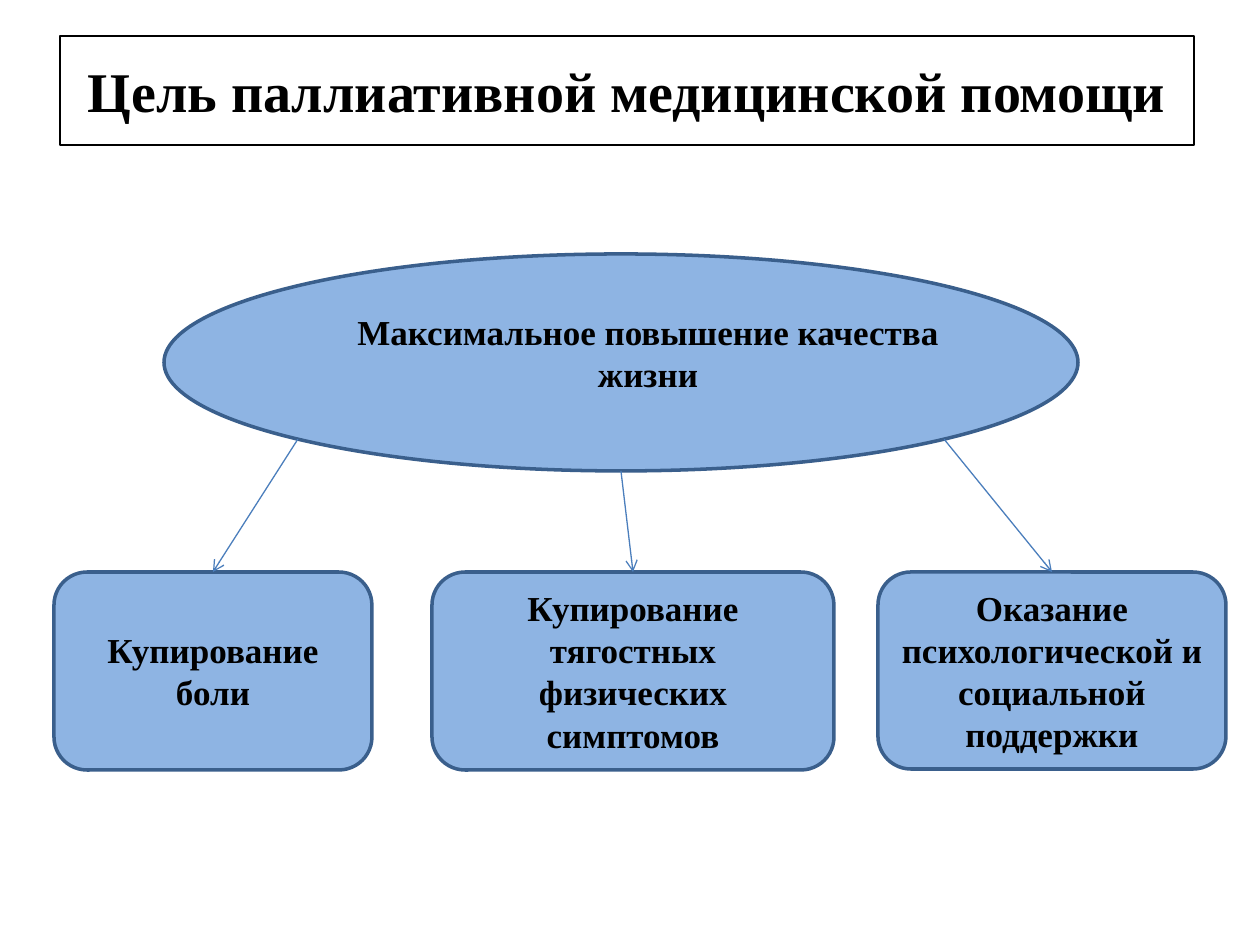
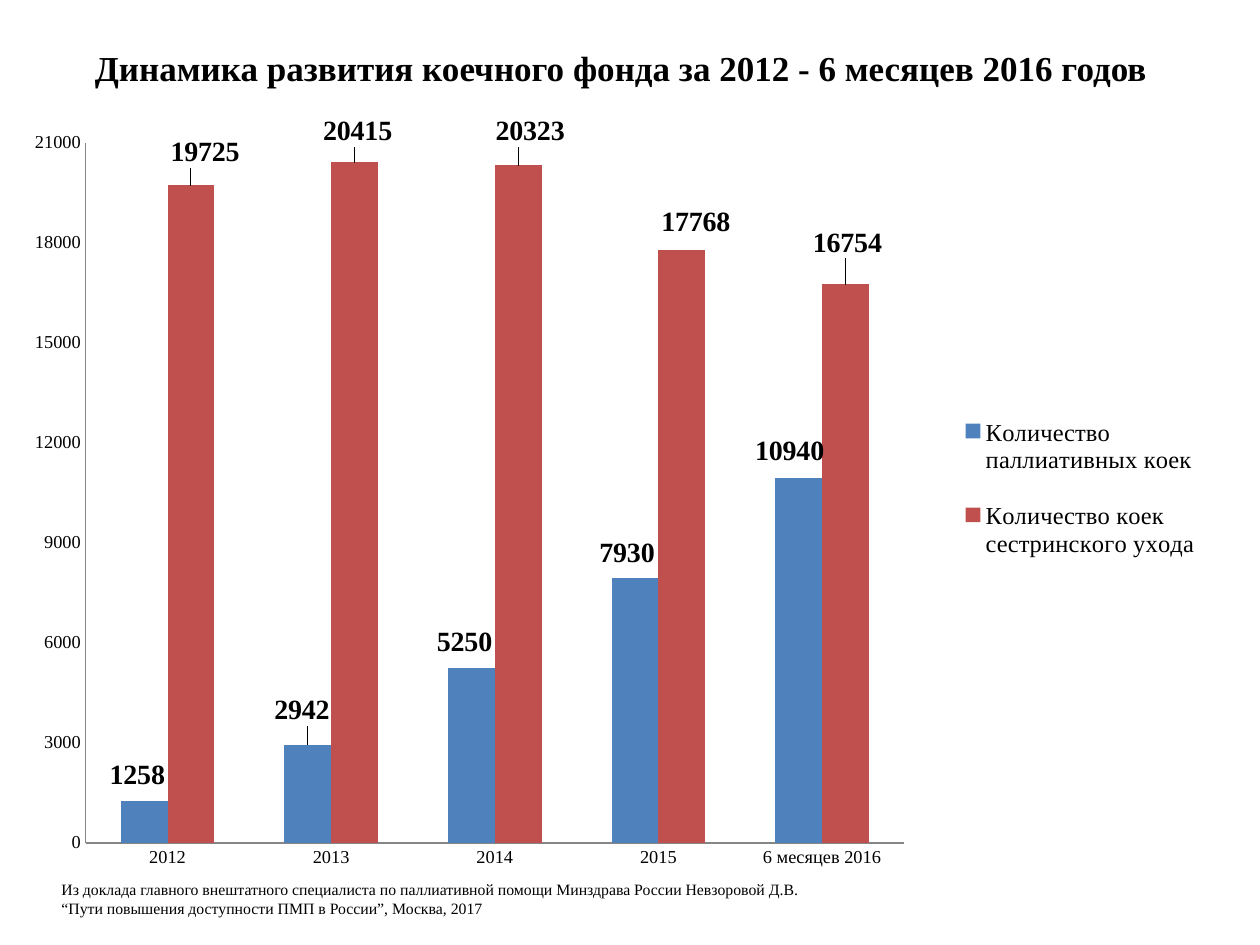
from dataclasses import dataclass
from math import sqrt

from lxml import etree
from pptx import Presentation
from pptx.chart.data import CategoryChartData
from pptx.dml.color import RGBColor
from pptx.enum.chart import XL_CHART_TYPE, XL_LABEL_POSITION, XL_LEGEND_POSITION, XL_TICK_MARK
from pptx.enum.shapes import MSO_CONNECTOR, MSO_SHAPE
from pptx.enum.text import MSO_ANCHOR, PP_ALIGN
from pptx.oxml.ns import qn
from pptx.util import Emu, Pt

RECTANGLE, ELLIPSE, ROUNDED = MSO_SHAPE.RECTANGLE, MSO_SHAPE.OVAL, MSO_SHAPE.ROUNDED_RECTANGLE
STRAIGHT = MSO_CONNECTOR.STRAIGHT
LEFT, CENTER = PP_ALIGN.LEFT, PP_ALIGN.CENTER
TOP, MIDDLE = MSO_ANCHOR.TOP, MSO_ANCHOR.MIDDLE
NO_TICKS = XL_TICK_MARK.NONE

PIXELS_PER_INCH = 126
FONT = "Times New Roman"
COLORS = {
    "text": "000000",
    "title_fill": "FFFFFF",
    "goal_fill": "8EB4E3",
    "goal_line": "3A5F8C",
    "arrow": "4B7EBC",
    "palliative": "4F81BD",
    "nursing": "C0504D",
    "axis": "868686",
}


@dataclass(frozen=True)
class Box:
    left: int
    top: int
    width: int
    height: int

    def emu(self):
        return [px(value) for value in (self.left, self.top, self.width, self.height)]


@dataclass(frozen=True)
class Task:
    box: Box
    lines: tuple[str, ...]


@dataclass(frozen=True)
class BedSeries:
    name: str
    color: str
    values: tuple[int, ...]
    label_shifts: tuple[tuple[int, int], ...]


TITLE_BOX = Box(60, 36, 1134, 109)
CHART_TITLE_BOX = Box(54, 43, 1134, 48)
GOAL_BOX = Box(164, 254, 914, 217)
GOAL_TEXT_BOX = Box(333, 304, 630, 97)
TASKS = (
    Task(Box(54, 572, 318, 198), ("Купирование боли",)),
    Task(Box(432, 572, 402, 198), ("Купирование тягостных", "физических симптомов")),
    Task(Box(878, 572, 348, 197), ("Оказание психологической и социальной поддержки",)),
)
CHART_BOX = Box(15, 116, 1221, 774)
PLOT_BOX = Box(86, 137, 818, 706)
LEGEND_BOX = Box(950, 386, 260, 198)
SOURCE_BOX = Box(49, 874, 775, 71)
PERIODS = ("2012", "2013", "2014", "2015", "6 месяцев 2016")
BEDS = (
    BedSeries("Количество паллиативных коек", "palliative", (1258, 2942, 5250, 7930, 10940),
              ((-7, -5), (-6, -14), (-7, -5), (-8, -5), (-9, -6))),
    BedSeries("Количество коек сестринского ухода", "nursing", (19725, 20415, 20323, 17768, 16754),
              ((14, -12), (3, -10), (12, -13), (14, -8), (2, -21))),
)


def px(value: float) -> Emu:
    return Emu(round(value * 914400 / PIXELS_PER_INCH))


def rgb(name: str) -> RGBColor:
    return RGBColor.from_string(COLORS[name])


def style_font(font, size: float, bold: bool = False) -> None:
    font.name, font.size, font.bold = FONT, Pt(size), bold
    font.color.rgb = rgb("text")


def write(shape, lines: tuple[str, ...], size: float, bold: bool = True,
          align=CENTER, anchor=MIDDLE) -> None:
    frame = shape.text_frame
    frame.word_wrap = True
    frame.vertical_anchor = anchor
    frame.text = "\n".join(lines)
    for paragraph in frame.paragraphs:
        paragraph.alignment = align
        style_font(paragraph.font, size, bold)


def add_text(slide, box: Box, text: str, size: float, **style) -> None:
    write(slide.shapes.add_textbox(*box.emu()), (text,), size, **style)


def add_outlined(slide, kind, box: Box, fill: str, line: str, line_width: float):
    shape = slide.shapes.add_shape(kind, *box.emu())
    shape.shadow.inherit = False
    shape.fill.solid()
    shape.fill.fore_color.rgb = rgb(fill)
    shape.line.color.rgb = rgb(line)
    shape.line.width = Pt(line_width)
    return shape


def add_arrow(slide, start: tuple[float, float], target) -> None:
    """Draw an arrow from a point to the top centre of the target shape."""
    arrow = slide.shapes.add_connector(STRAIGHT, px(start[0]), px(start[1]), 0, 0)
    arrow.end_connect(target, 0)
    arrow.line.color.rgb = rgb("arrow")
    arrow.line.width = Pt(0.75)
    etree.SubElement(arrow.line._get_or_add_ln(), qn("a:tailEnd"), type="arrow")
    etree.SubElement(arrow._element.spPr, qn("a:effectLst"))


def set_layout(parent, index: int, settings: dict[str, str | float]) -> None:
    """Give a chart element a manual layout as its child at the index."""
    for previous in parent.findall(qn("c:layout")):
        parent.remove(previous)
    layout = etree.Element(qn("c:layout"))
    manual = etree.SubElement(layout, qn("c:manualLayout"))
    for tag, value in settings.items():
        etree.SubElement(manual, qn(f"c:{tag}"), val=str(value))
    parent.insert(index, layout)


def chart_fractions(box: Box) -> dict[str, str | float]:
    return {
        "xMode": "edge",
        "yMode": "edge",
        "x": round((box.left - CHART_BOX.left) / CHART_BOX.width, 3),
        "y": round((box.top - CHART_BOX.top) / CHART_BOX.height, 3),
        "w": round(box.width / CHART_BOX.width, 3),
        "h": round(box.height / CHART_BOX.height, 3),
    }


def style_axis(axis) -> None:
    axis.has_major_gridlines = False
    axis.major_tick_mark = axis.minor_tick_mark = NO_TICKS
    axis.format.line.color.rgb = rgb("axis")
    axis.format.line.width = Pt(0.75)
    style_font(axis.tick_labels.font, 10.5)


def style_series(series, beds: BedSeries) -> None:
    series.format.fill.solid()
    series.format.fill.fore_color.rgb = rgb(beds.color)
    labels = series.data_labels
    labels.show_value = True
    style_font(labels.font, 16, bold=True)
    for index in range(len(beds.values)):
        label = series.points[index].data_label
        label.position = XL_LABEL_POSITION.OUTSIDE_END
        style_font(label.font, 16, bold=True)
    for element, (right, down) in zip(labels._element.findall(qn("c:dLbl")), beds.label_shifts):
        set_layout(element, 1, {"x": round(right / CHART_BOX.width, 4),
                                "y": round(down / CHART_BOX.height, 4)})


def add_beds_chart(slide) -> None:
    data = CategoryChartData()
    data.categories = PERIODS
    for beds in BEDS:
        data.add_series(beds.name, beds.values)
    chart = slide.shapes.add_chart(XL_CHART_TYPE.COLUMN_CLUSTERED, *CHART_BOX.emu(), data).chart
    chart.has_title = False
    style_font(chart.font, 10)

    plot = chart.plots[0]
    plot.gap_width, plot.overlap, plot.vary_by_categories = 150, 0, False
    for series, beds in zip(plot.series, BEDS):
        style_series(series, beds)
    for axis in (chart.category_axis, chart.value_axis):
        style_axis(axis)
    value_axis = chart.value_axis
    value_axis.minimum_scale, value_axis.maximum_scale, value_axis.major_unit = 0, 21000, 3000

    chart.has_legend = True
    legend = chart.legend
    legend.position = XL_LEGEND_POSITION.RIGHT
    legend.include_in_layout = False
    style_font(legend.font, 14)
    set_layout(legend._element, 1, chart_fractions(LEGEND_BOX))
    set_layout(chart._chartSpace.chart.plotArea, 0,
               {"layoutTarget": "inner"} | chart_fractions(PLOT_BOX))


def build_goal_slide(slide) -> None:
    title = add_outlined(slide, RECTANGLE, TITLE_BOX, "title_fill", "text", 0.75)
    write(title, ("Цель паллиативной медицинской помощи",), 32)
    add_outlined(slide, ELLIPSE, GOAL_BOX, "goal_fill", "goal_line", 2)
    add_text(slide, GOAL_TEXT_BOX, "Максимальное повышение качества жизни", 20, anchor=TOP)

    radius_x, radius_y = GOAL_BOX.width / 2, GOAL_BOX.height / 2
    center_x, center_y = GOAL_BOX.left + radius_x, GOAL_BOX.top + radius_y
    diagonal = sqrt(0.5)
    directions = ((-diagonal, diagonal), (0, 1), (diagonal, diagonal))
    for task, (across, down) in zip(TASKS, directions):
        shape = add_outlined(slide, ROUNDED, task.box, "goal_fill", "goal_line", 2)
        write(shape, task.lines, 20)
        add_arrow(slide, (center_x + radius_x * across, center_y + radius_y * down), shape)


def build_beds_slide(slide) -> None:
    add_text(slide, CHART_TITLE_BOX,
             "Динамика развития коечного фонда за 2012 - 6 месяцев 2016 годов", 20)
    add_beds_chart(slide)
    add_text(slide, SOURCE_BOX,
             "Из доклада главного внештатного специалиста по паллиативной помощи Минздрава России "
             "Невзоровой Д.В. “Пути повышения доступности ПМП в России”, Москва, 2017",
             9, bold=False, align=LEFT, anchor=TOP)


def main() -> None:
    presentation = Presentation()
    presentation.slide_width, presentation.slide_height = px(1260), px(945)
    blank = presentation.slide_layouts[6]
    for build in (build_goal_slide, build_beds_slide):
        build(presentation.slides.add_slide(blank))
    presentation.save("out.pptx")


if __name__ == "__main__":
    main()
